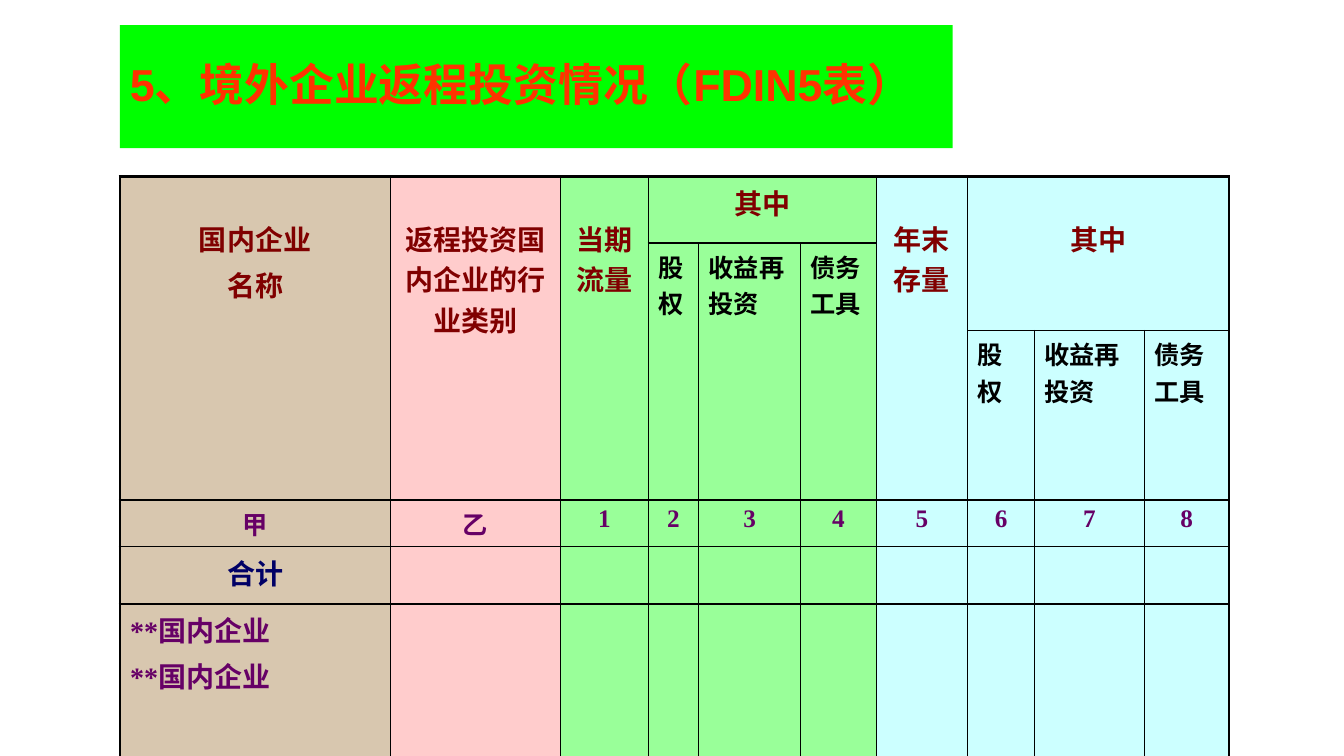
from lxml.etree import SubElement
from pptx import Presentation
from pptx.dml.color import RGBColor
from pptx.enum.shapes import MSO_SHAPE
from pptx.enum.text import MSO_ANCHOR, PP_ALIGN
from pptx.oxml.ns import qn
from pptx.util import Inches, Pt

GREEN = RGBColor(0x00, 0xFF, 0x00)
ORANGE = RGBColor(0xFF, 0x33, 0x00)
TAN = RGBColor(0xD8, 0xC7, 0xAF)
PINK = RGBColor(0xFF, 0xCC, 0xCC)
MINT = RGBColor(0x99, 0xFF, 0x99)
AQUA = RGBColor(0xCC, 0xFF, 0xFF)
MAROON = RGBColor(0x80, 0x00, 0x00)
PURPLE = RGBColor(0x66, 0x00, 0x66)
NAVY = RGBColor(0x00, 0x00, 0x66)
BLACK = RGBColor(0x00, 0x00, 0x00)

SERIF, SANS = "Times New Roman", "Arial"
LEFT = 1.19
COLUMNS = [2.68, 1.69, 0.87, 0.5, 1.01, 0.75, 0.91, 0.66, 1.09, 0.84]
ROWS = [0.66, 0.87, 1.68, 0.45, 0.57, 1.64]
COLUMN_FILLS = [TAN, PINK] + [MINT] * 4 + [AQUA] * 4
THIN, THICK = 1, 2.25
LOWERED = 0.41  # top margin of the tall headings

# row, column, rows spanned, columns spanned, text, top margin
HEADINGS = [
    (0, 0, 3, 1, "国内企业\n名称", LOWERED),
    (0, 1, 3, 1, "返程投资国内企业的行业类别", LOWERED),
    (0, 2, 3, 1, "当期流量", LOWERED),
    (0, 3, 1, 3, "其中", 0.05),
    (0, 6, 3, 1, "年末存量", LOWERED),
    (0, 7, 2, 3, "其中", LOWERED),
]
COMPONENTS = ["股权", "收益再投资", "债务工具"]
COLUMN_CODES = ["甲", "乙", *"12345678"]


def add_title(slide, text):
    s = slide.shapes.add_shape(MSO_SHAPE.RECTANGLE, Inches(LEFT), Inches(0.25),
                               Inches(8.26), Inches(1.22))
    s.shadow.inherit = False
    s.fill.solid()
    s.fill.fore_color.rgb = GREEN
    s.line.fill.background()
    tf = s.text_frame
    tf.word_wrap = True
    tf.vertical_anchor = MSO_ANCHOR.MIDDLE
    p = tf.paragraphs[0]
    p.text = text
    p.alignment = PP_ALIGN.LEFT
    p.line_spacing = 0.9
    set_font(p, SANS, 32, ORANGE)


def set_font(p, name, size, color):
    p.font.name = name
    p.font.size = Pt(size)
    p.font.bold = True
    p.font.color.rgb = color


def write(cell, text, size, color, name=SERIF, align=PP_ALIGN.CENTER, before=4):
    cell.text = text
    for p in cell.text_frame.paragraphs:
        p.alignment = align
        p.space_before = Pt(before)
        set_font(p, name, size, color)


def set_borders(cell, row, col):
    """Thick lines on the table's outer edge, thin lines inside."""
    outer = {
        "a:lnL": col == 0,
        "a:lnR": col + cell.span_width == len(COLUMNS),
        "a:lnT": row == 0,
        "a:lnB": row + cell.span_height == len(ROWS),
    }
    tcPr = cell._tc.get_or_add_tcPr()
    for i, (tag, is_outer) in enumerate(outer.items()):
        ln = SubElement(tcPr, qn(tag), w=str(Pt(THICK if is_outer else THIN)))
        fill = SubElement(ln, qn("a:solidFill"))
        SubElement(fill, qn("a:srgbClr"), val=str(BLACK))
        tcPr.insert(i, ln)


def add_grid(slide):
    """Add the table with its merged headings, fills and borders."""
    frame = slide.shapes.add_table(len(ROWS), len(COLUMNS), Inches(LEFT), Inches(1.75),
                                   Inches(sum(COLUMNS)), Inches(sum(ROWS)))
    table = frame.table
    table.first_row = table.horz_banding = False
    for column, width in zip(table.columns, COLUMNS):
        column.width = Inches(width)
    for row, height in zip(table.rows, ROWS):
        row.height = Inches(height)
    for row, col, height, width, text, top in HEADINGS:
        cell = table.cell(row, col)
        cell.merge(table.cell(row + height - 1, col + width - 1))
        cell.margin_top = Inches(top)
        write(cell, text, 20, MAROON)
    for col in range(3, 6):
        table.cell(1, col).merge(table.cell(2, col))
    for row in range(len(ROWS)):
        for col, color in enumerate(COLUMN_FILLS):
            cell = table.cell(row, col)
            cell.fill.solid()
            cell.fill.fore_color.rgb = color
            if not cell.is_spanned:
                set_borders(cell, row, col)
    return table


def fill_in(table):
    for row, first_col in ((1, 3), (2, 7)):
        for i, text in enumerate(COMPONENTS):
            write(table.cell(row, first_col + i), text, 18, BLACK, SANS, PP_ALIGN.LEFT, 0)
    for col, code in enumerate(COLUMN_CODES):
        write(table.cell(3, col), code, 18, PURPLE)
    write(table.cell(4, 0), "合计", 20, NAVY)
    write(table.cell(5, 0), "**国内企业\n**国内企业", 20, PURPLE, align=PP_ALIGN.LEFT)


def main():
    prs = Presentation()
    prs.slide_width, prs.slide_height = Inches(13.33), Inches(7.5)
    slide = prs.slides.add_slide(prs.slide_layouts[6])
    add_title(slide, "5、境外企业返程投资情况（FDIN5表）")
    fill_in(add_grid(slide))
    prs.save("out.pptx")


if __name__ == "__main__":
    main()
